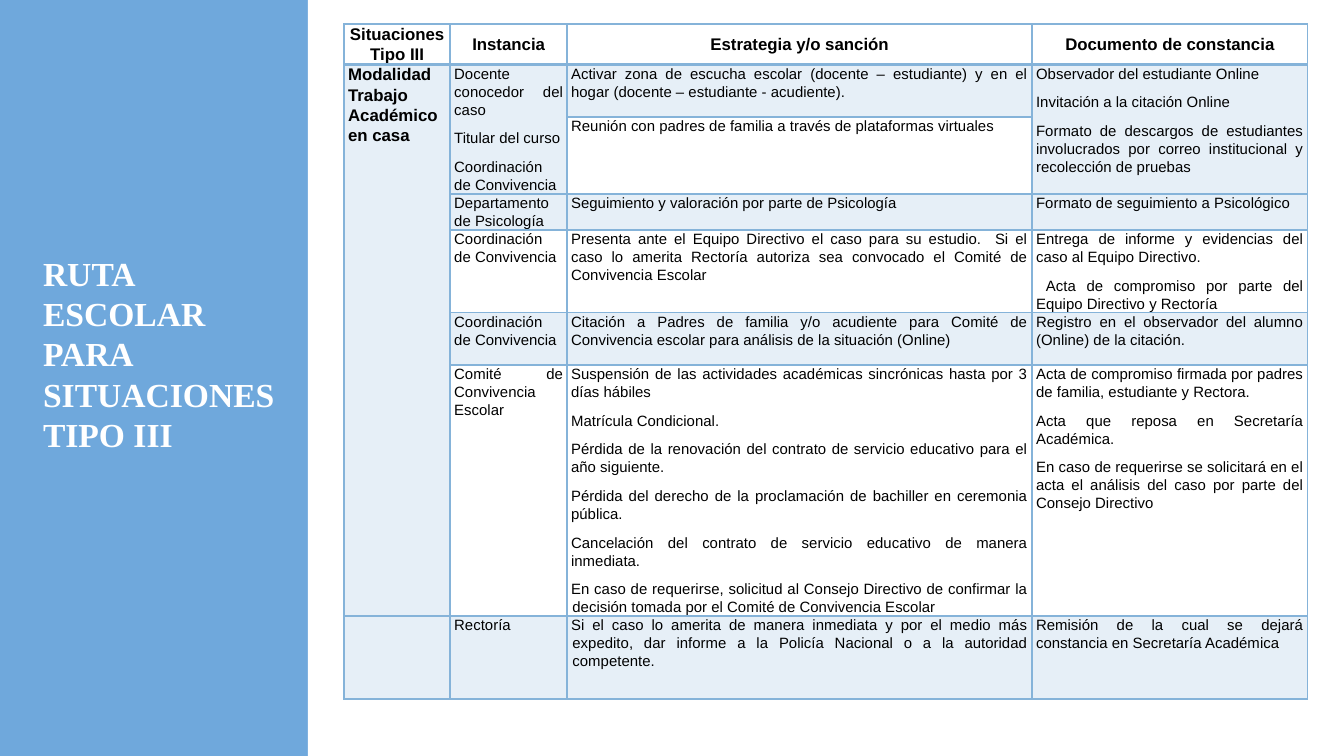
from lxml.etree import SubElement
from pptx import Presentation
from pptx.dml.color import RGBColor
from pptx.enum.shapes import MSO_SHAPE
from pptx.enum.text import MSO_ANCHOR, MSO_AUTO_SIZE, PP_ALIGN
from pptx.oxml import parse_xml
from pptx.oxml.ns import nsdecls, qn
from pptx.util import Inches, Pt

hues = {"blue": "6FA8DC", "white": "FFFFFF", "black": "000000", "line": "85B3D9"}
ink = {name: RGBColor.from_string(code) for name, code in hues.items()}


def style(item, form):
    for key, value in form.items():
        setattr(item, key, value)


# Widescreen deck, 16 to 9
deck = Presentation()
deck.slide_width = Inches(10)
deck.slide_height = Inches(10) * 9 // 16
slide = deck.slides.add_slide(deck.slide_layouts[5])

# Background and white panel
back = slide.background.fill
back.solid()
back.fore_color.rgb = ink["blue"]
panel = slide.shapes.add_shape(
    MSO_SHAPE.RECTANGLE, Inches(2.29), 0, Inches(7.71), deck.slide_height)
panel.shadow.inherit = False
panel.fill.solid()
panel.fill.fore_color.rgb = ink["white"]
panel.line.fill.background()

# Title
title = slide.shapes.title
style(title, {"left": Inches(0.22), "top": Inches(1.78),
              "width": Inches(2.02), "height": Inches(2.06)})
edge = Inches(0.1)
style(title.text_frame, {
    "text": "RUTA ESCOLAR PARA SITUACIONES TIPO III",
    "word_wrap": True, "auto_size": MSO_AUTO_SIZE.NONE,
    "vertical_anchor": MSO_ANCHOR.TOP, "margin_left": edge,
    "margin_right": edge, "margin_top": edge, "margin_bottom": edge})
para = title.text_frame.paragraphs[0]
style(para, {"alignment": PP_ALIGN.JUSTIFY, "line_spacing": 1.0})
style(para.runs[0].font, {"name": "Times New Roman", "size": Pt(18), "bold": True})
para.runs[0].font.color.rgb = ink["white"]

# Table text, one list per row; a line break starts a new paragraph
rows = [
    ["Situaciones Tipo III", "Instancia", "Estrategia y/o sanción",
     "Documento de constancia"],
    ["Modalidad Trabajo Académico en casa",
     "Docente conocedor del caso\nTitular del curso\nCoordinación de Convivencia",
     "Activar zona de escucha escolar (docente – estudiante) y en el hogar "
     "(docente – estudiante - acudiente).",
     "Observador del estudiante Online\nInvitación a la citación Online\n"
     "Formato de descargos de estudiantes involucrados por correo institucional "
     "y recolección de pruebas"],
    ["", "", "Reunión con padres de familia a través de plataformas virtuales", ""],
    ["", "Departamento de Psicología",
     "Seguimiento y valoración por parte de Psicología",
     "Formato de seguimiento a Psicológico"],
    ["", "Coordinación de Convivencia",
     "Presenta ante el Equipo Directivo el caso para su estudio.  Si el caso lo "
     "amerita Rectoría autoriza sea convocado el Comité de Convivencia Escolar",
     "Entrega de informe y evidencias del caso al Equipo Directivo.\n"
     " Acta de compromiso por parte del Equipo Directivo y Rectoría"],
    ["", "Coordinación de Convivencia",
     "Citación a Padres de familia y/o acudiente para Comité de Convivencia "
     "escolar para análisis de la situación (Online)",
     "Registro en el observador del alumno (Online) de la citación."],
    ["", "Comité de Convivencia Escolar",
     "Suspensión de las actividades académicas sincrónicas hasta por 3 días hábiles\n"
     "Matrícula Condicional.\n"
     "Pérdida de la renovación del contrato de servicio educativo para el año "
     "siguiente.\n"
     "Pérdida del derecho de la proclamación de bachiller en ceremonia pública.\n"
     "Cancelación del contrato de servicio educativo de manera inmediata.\n"
     "En caso de requerirse, solicitud al Consejo Directivo de confirmar la "
     "decisión tomada por el Comité de Convivencia Escolar",
     "Acta de compromiso firmada por padres de familia, estudiante y Rectora.\n"
     "Acta que reposa en Secretaría Académica.\n"
     "En caso de requerirse se solicitará en el acta el análisis del caso por "
     "parte del Consejo Directivo"],
    ["", "Rectoría",
     "Si el caso lo amerita de manera inmediata y por el medio más expedito, dar "
     "informe a la Policía Nacional o a la autoridad competente.",
     "Remisión de la cual se dejará constancia en Secretaría Académica"],
]
wide = [0.79, 0.87, 3.46, 2.05]
high = [0.16, 0.39, 0.26, 0.2, 0.46, 0.39, 1.68, 0.62]
tinted = {1, 3, 5, 7}
hanging = {(6, 2), (7, 2)}

# Table grid; rows grow to fit their text
frame = slide.shapes.add_table(
    len(rows), len(wide), Inches(2.56), Inches(0.18),
    Inches(sum(wide)), Inches(5.26))
grid = frame.table
style(grid, {"first_row": False, "horz_banding": False})
for col, size in zip(grid.columns, wide):
    col.width = Inches(size)
for row, size in zip(grid.rows, high):
    row.height = Inches(size)
frame.height = Inches(5.26)

# Cells: text, fill, borders
for r, texts in enumerate(rows):
    for c, text in enumerate(texts):
        cell = grid.cell(r, c)
        head = r == 0
        style(cell, {
            "margin_left": Inches(0.03), "margin_right": Inches(0.03),
            "margin_top": 0, "margin_bottom": 0,
            "vertical_anchor": MSO_ANCHOR.MIDDLE if head else MSO_ANCHOR.TOP})
        if text:
            cell.text = text
        bold = head or c == 0
        for para in cell.text_frame.paragraphs:
            style(para, {
                "alignment": PP_ALIGN.CENTER if head else PP_ALIGN.JUSTIFY,
                "line_spacing": 1.07, "space_after": Pt(5.7)})
            for run in para.runs:
                style(run.font, {"name": "Arial", "size": Pt(9 if bold else 8),
                                 "bold": bold})
                run.font.color.rgb = ink["black"]
        if (r, c) in hanging:
            props = para._p.get_or_add_pPr()
            props.set("marL", str(Inches(0.01)))
            props.set("indent", str(Inches(-0.01)))

        if r in tinted or (c == 0 and not head):
            cell.fill.solid()
            cell.fill.fore_color.rgb = ink["line"]
            tone = cell._tc.tcPr.find(".//" + qn("a:srgbClr"))
            SubElement(tone, qn("a:alpha"), val="20000")
        else:
            cell.fill.background()

        for spot, side in enumerate("LRTB"):
            thick = (r, side) in {(0, "B"), (1, "T")}
            cell._tc.tcPr.insert(spot, parse_xml(
                f'<a:ln{side} {nsdecls("a")} w="{Pt(2 if thick else 1)}"><a:solidFill>'
                f'<a:srgbClr val="{hues["line"]}"/></a:solidFill></a:ln{side}>'))

# Merged cells
for c, last in [(0, 6), (1, 2), (3, 2)]:
    grid.cell(1, c).merge(grid.cell(last, c))

deck.save("out.pptx")
